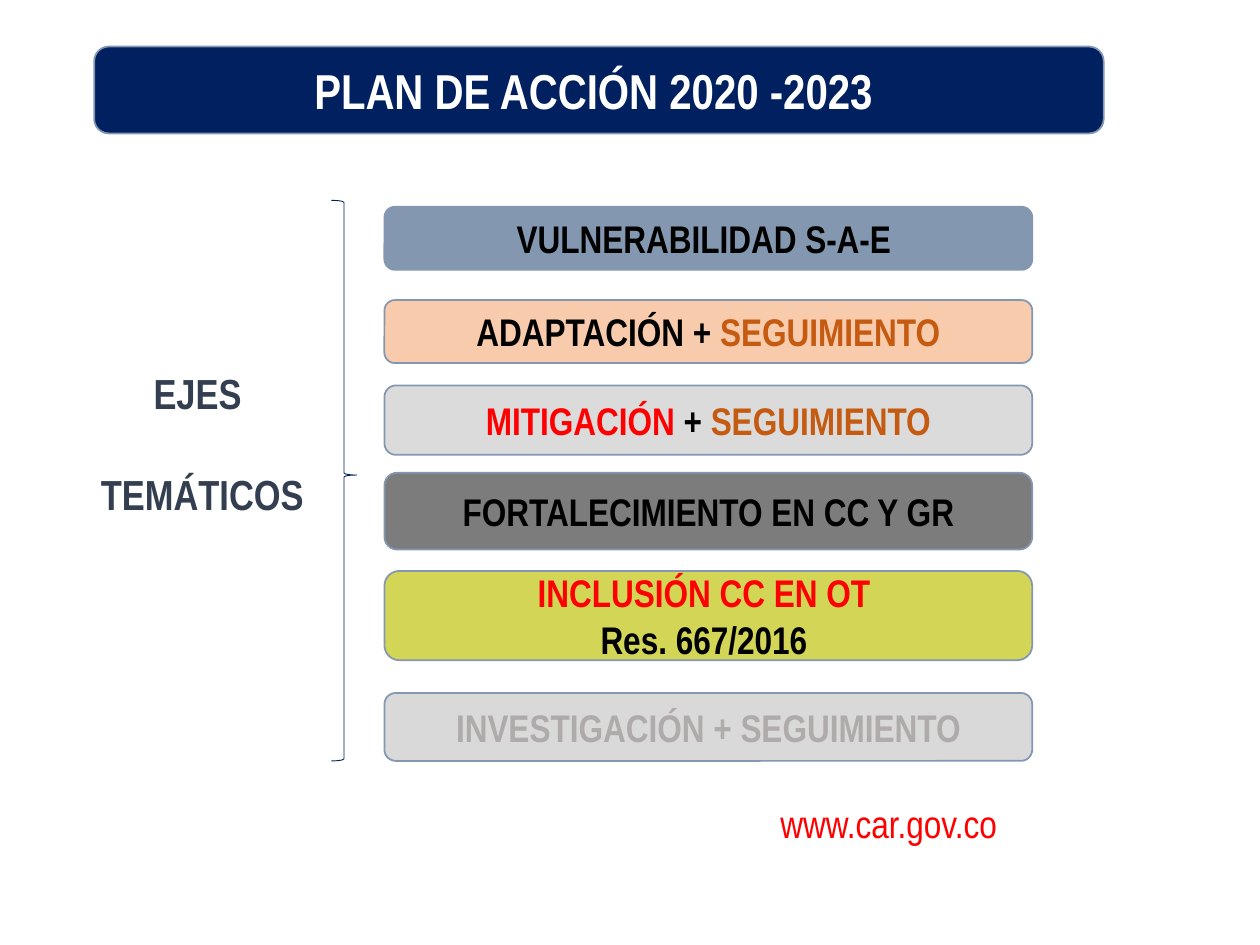
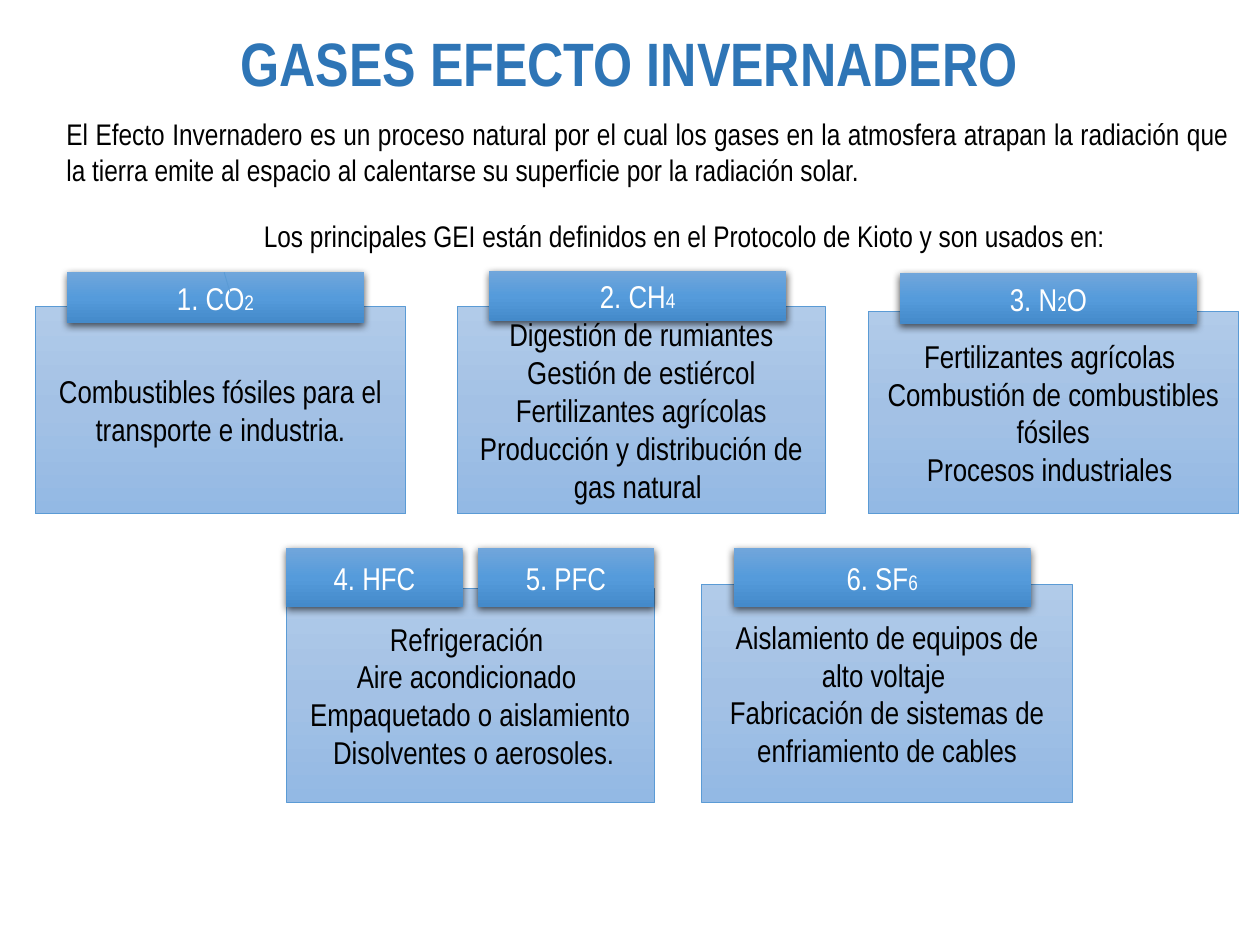
from copy import deepcopy
from dataclasses import dataclass

from lxml import etree
from pptx import Presentation
from pptx.dml.color import RGBColor
from pptx.enum import shapes, text
from pptx.oxml import ns
from pptx.util import Cm, Pt


@dataclass(frozen=True)
class Theme:
    font: str = "Arial Narrow"
    navy: str = "002060"
    edge: str = "8497B0"
    blue: str = "5B9BD5"
    title: str = "2E75B6"
    slate: str = "333F50"
    red: str = "FF0000"
    rust: str = "C55A11"
    gray: str = "AFABAB"
    black: str = "000000"
    white: str = "FFFFFF"
    card: tuple = ("B1CBE9", "A3C1E5", "93B9E4")
    tab: tuple = ("71A6DB", "559BDB", "448ACA")
    title_pt: int = 35
    band_pt: int = 28
    label_pt: int = 24
    bar_pt: int = 22
    card_pt: int = 18
    intro_pt: int = 17
    index_pt: int = 12


T = Theme()
CENTER, JUSTIFY = text.PP_ALIGN.CENTER, text.PP_ALIGN.JUSTIFY
RECT, ROUND = shapes.MSO_SHAPE.RECTANGLE, shapes.MSO_SHAPE.ROUNDED_RECTANGLE

PLAN_TITLE = "PLAN DE ACCIÓN 2020 -2023 "
AXES_LABEL = ["EJES ", "TEMÁTICOS"]
WEBSITE = "www.car.gov.co"
FOLLOW_UP = ("SEGUIMIENTO", T.rust)
AXES = [
    (4.17, 1.27, T.edge, ["VULNERABILIDAD S-A-E "]),
    (6.05, 1.27, "F8CBAD", [["ADAPTACIÓN + ", FOLLOW_UP]]),
    (7.77, 1.4, "DBDBDB", [[("MITIGACIÓN", T.red), " + ", FOLLOW_UP]]),
    (9.53, 1.55, "7C7C7C", ["FORTALECIMIENTO EN CC Y GR"]),
    (11.51, 1.8, "D2D555", [[("INCLUSIÓN CC EN OT ", T.red)], "Res. 667/2016 "]),
    (13.97, 1.37, "D9D9D9", [[("INVESTIGACIÓN + SEGUIMIENTO", T.gray)]]),
]

GAS_TITLE = "GASES EFECTO INVERNADERO"
GAS_INTRO = (
    "El Efecto Invernadero es un proceso natural por el cual los gases en la "
    "atmosfera atrapan la radiación que la tierra emite al espacio al calentarse "
    "su superficie por la radiación solar."
)
GAS_LEAD = "Los principales GEI están definidos en el Protocolo de Kioto y son usados en:"
GAS_ROWS = [
    dict(bottom=10.36, tab_height=1.02, cards=[
        (0.71, 6.17, 7.47, 5.49, [["1. CO", ("2", T.index_pt)]],
         ["Combustibles fósiles para el transporte e industria."]),
        (9.22, 6.17, 7.42, 5.46, [["2. CH", ("4", T.index_pt)]],
         ["Digestión de rumiantes", "Gestión de estiércol", "Fertilizantes agrícolas",
          "Producción y distribución de gas natural "]),
        (17.5, 6.27, 7.47, 5.51, [["3. N", ("2", T.index_pt), "O"]],
         ["Fertilizantes agrícolas ", "Combustión de combustibles fósiles",
          "Procesos industriales "]),
    ]),
    dict(bottom=16.17, tab_height=1.19, cards=[
        (5.77, 11.86, 7.42, 11.05, ["4. HFC", "5. PFC"],
         ["Refrigeración ", "Aire acondicionado ", "Empaquetado o aislamiento",
          " Disolventes o aerosoles."]),
        (14.15, 11.79, 7.47, 11.05, [["6. SF", ("6", T.index_pt)]],
         ["Aislamiento de equipos de alto voltaje ",
          "Fabricación de sistemas de enfriamiento de cables"]),
    ]),
]
TAB_WIDTH, TAB_INSET, HALF_TAB_WIDTH = 5.99, 0.64, 3.56


def rgb(value):
    return RGBColor.from_string(value)


def write(sp, paragraphs, size, color, bold=False, align=CENTER,
          anchor=text.MSO_ANCHOR.MIDDLE, gap=0):
    tf = sp.text_frame
    tf.word_wrap = True
    tf.vertical_anchor = anchor
    for i, runs in enumerate(paragraphs):
        p = tf.paragraphs[0] if i == 0 else tf.add_paragraph()
        p.alignment = align
        if i and gap:
            p.space_before = Pt(gap)
        p.font.name, p.font.bold = T.font, bold
        p.font.size, p.font.color.rgb = Pt(size), rgb(color)
        for run in [runs] if isinstance(runs, str) else runs:
            content, change = (run, None) if isinstance(run, str) else run
            r = p.add_run()
            r.text = content
            if isinstance(change, str):
                r.font.color.rgb = rgb(change)
            elif change:
                r.font.size = Pt(change)
    return tf


def textbox(s, box, paragraphs, size, color, **style):
    sp = s.shapes.add_textbox(*map(Cm, box))
    style.setdefault("anchor", text.MSO_ANCHOR.TOP)
    return write(sp, paragraphs, size, color, **style)


def shape(s, kind, box, fill, line=None, width=1):
    sp = s.shapes.add_shape(kind, *map(Cm, box))
    sp.shadow.inherit = False
    if isinstance(fill, str):
        sp.fill.solid()
        sp.fill.fore_color.rgb = rgb(fill)
    else:
        sp.fill.gradient()
        stops = sp._element.spPr.find(".//" + ns.qn("a:gsLst"))
        stops.append(deepcopy(stops[0]))
        for i, (stop, color) in enumerate(zip(sp.fill.gradient_stops, fill)):
            stop.position, stop.color.rgb = i / 2, rgb(color)
        sp.fill.gradient_angle = 270
    if line:
        sp.line.color.rgb, sp.line.width = rgb(line), Pt(width)
    else:
        sp.line.fill.background()
    return sp


def cast_shadow(sp):
    effects = sp._element.spPr.find(ns.qn("a:effectLst"))
    shadow = etree.SubElement(effects, ns.qn("a:outerShdw"), blurRad=str(Pt(4.5)),
                              dist=str(Pt(1.5)), dir="5400000", algn="ctr", rotWithShape="0")
    color = etree.SubElement(shadow, ns.qn("a:srgbClr"), val=T.black)
    etree.SubElement(color, ns.qn("a:alpha"), val="63000")


def plan_slide(s):
    tf = textbox(s, (13.84, 16.03, 8.15, 0.97), [WEBSITE], T.bar_pt, T.red)
    tf.margin_left = tf.margin_right = Cm(0.18)
    tf.margin_top = tf.margin_bottom = Cm(0.1)
    brace = shape(s, shapes.MSO_SHAPE.RIGHT_BRACE, (6.68, 4.04, 0.51, 11.3),
                  T.white, T.navy, 0.5)
    brace.adjustments[0], brace.adjustments[1] = 0.08, 0.49
    band = shape(s, ROUND, (1.9, 0.94, 20.35, 1.75), T.navy, T.edge)
    write(band, [PLAN_TITLE], T.band_pt, T.white, bold=True)
    for top, height, fill, label in AXES:
        bar = shape(s, ROUND, (7.75, top, 13.06, height), fill, T.edge)
        write(bar, label, T.bar_pt, T.black, bold=True)
    textbox(s, (1.68, 7.29, 4.8, 3.33), AXES_LABEL, T.label_pt, T.slate, bold=True, gap=29)


def gas_tab(s, box, label):
    tab = shape(s, RECT, box, T.tab)
    cast_shadow(tab)
    write(tab, [label], T.card_pt, T.white)


def gas_slide(s):
    tf = textbox(s, (1.9, 0.41, 21.59, 1.73), [GAS_TITLE], T.title_pt, T.title,
                 bold=True, anchor=text.MSO_ANCHOR.BOTTOM)
    tf.paragraphs[0].line_spacing = 0.9
    textbox(s, (1.09, 2.21, 23.95, 1.7), [GAS_INTRO], T.intro_pt, T.black, align=JUSTIFY)
    textbox(s, (4.11, 4.27, 19.38, 0.99), [GAS_LEAD], T.intro_pt, T.black)
    for row in GAS_ROWS:
        for left, top, width, tab_top, labels, uses in row["cards"]:
            card = shape(s, RECT, (left, top, width, row["bottom"] - top), T.card, T.blue, 0.5)
            write(card, uses, T.card_pt, T.black)
            paired = len(labels) > 1
            tab_width = HALF_TAB_WIDTH if paired else TAB_WIDTH
            start = left if paired else left + TAB_INSET
            for i, label in enumerate(labels):
                x = start + i * (width - tab_width)
                gas_tab(s, (x, tab_top, tab_width, row["tab_height"]), label)
    tick = s.shapes.add_connector(shapes.MSO_CONNECTOR.STRAIGHT,
                                  *map(Cm, (4.52, 5.49, 4.65, 5.94)))
    tick.line.color.rgb, tick.line.width = rgb(T.blue), Pt(0.5)
    etree.SubElement(tick._element.spPr, ns.qn("a:effectLst"))


def main():
    prs = Presentation()
    prs.slide_width, prs.slide_height = Cm(25.4), Cm(19.05)
    for build in (plan_slide, gas_slide):
        build(prs.slides.add_slide(prs.slide_layouts[6]))
    prs.save("out.pptx")


if __name__ == "__main__":
    main()
